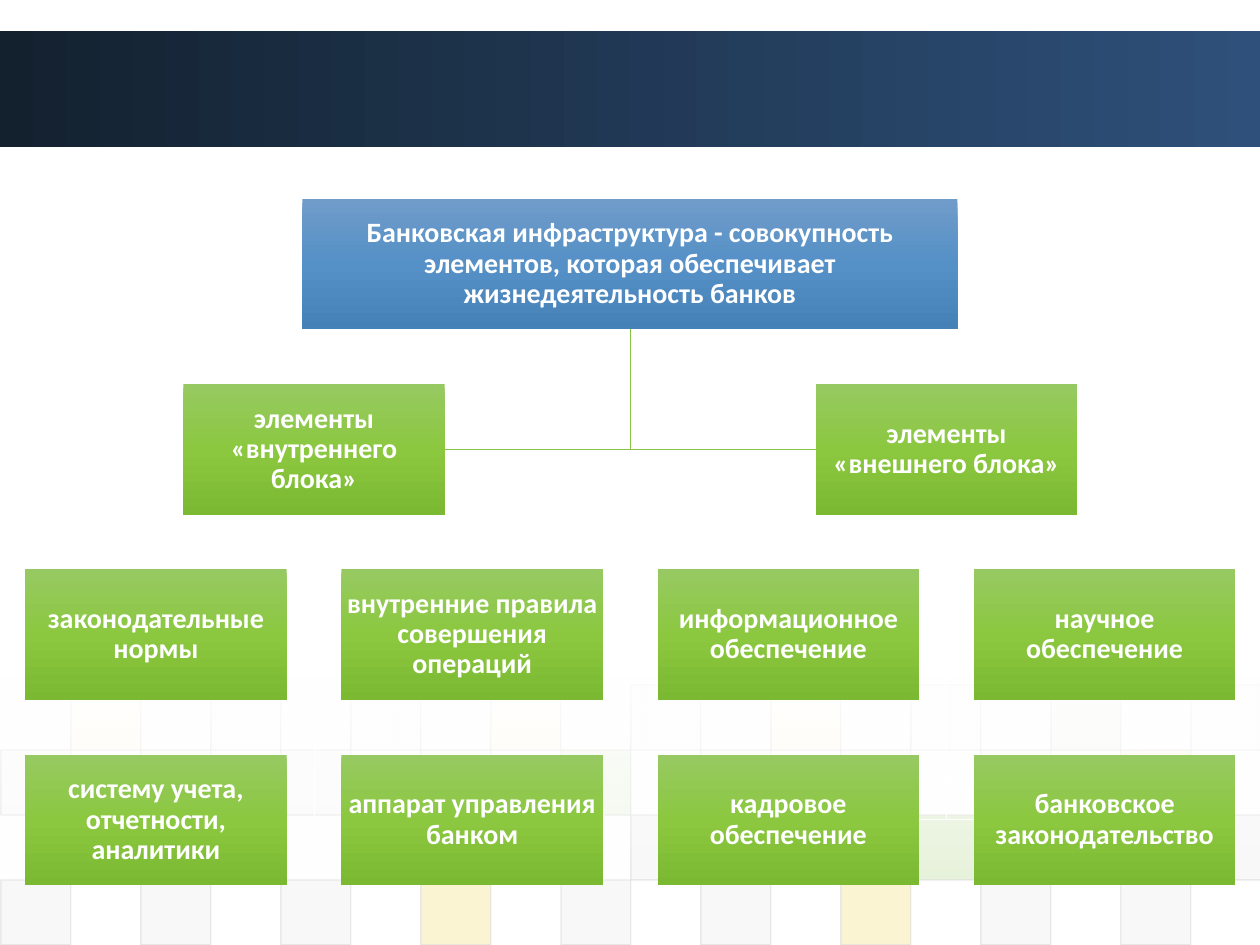
from lxml.etree import SubElement
from pptx import Presentation
from pptx.dml.color import RGBColor
from pptx.enum.shapes import MSO_SHAPE as Shape
from pptx.enum.text import MSO_ANCHOR as Anchor, PP_ALIGN as Align
from pptx.oxml.ns import qn
from pptx.util import Pt

WHITE = RGBColor(0xFF, 0xFF, 0xFF)
GREEN = RGBColor(0x8A, 0xC2, 0x46)
GRAY = RGBColor(0xDD, 0xDD, 0xDD)
LIGHT_GRAY = RGBColor(0xEA, 0xEA, 0xEA)
YELLOW = RGBColor(0xEF, 0xC8, 0x21)
NAVY = RGBColor(0x13, 0x21, 0x2F)
STEEL = RGBColor(0x2E, 0x50, 0x7A)
BLUE_STOPS = [(0, RGBColor(0x70, 0x9C, 0xC9), 100),
              (50, RGBColor(0x55, 0x90, 0xC7), 100),
              (100, RGBColor(0x45, 0x80, 0xB7), 100)]
GREEN_STOPS = [(0, RGBColor(0x97, 0xC9, 0x62), 100),
               (50, RGBColor(0x8B, 0xC8, 0x40), 100),
               (100, RGBColor(0x7C, 0xB9, 0x32), 100)]

presentation = Presentation()
presentation.slide_width = Pt(720)
presentation.slide_height = Pt(540)
slide = presentation.slides.add_slide(presentation.slide_layouts[6])
shapes = slide.shapes


def set_gradient(shape, stops, angle):
    shape.fill.gradient()
    gradient = shape._element.spPr.find(qn("a:gradFill"))
    for child in list(gradient):
        gradient.remove(child)
    stop_list = SubElement(gradient, qn("a:gsLst"))
    for position, color, opacity in stops:
        stop = SubElement(stop_list, qn("a:gs"), pos=str(position * 1000))
        color_element = SubElement(stop, qn("a:srgbClr"), val=str(color))
        SubElement(color_element, qn("a:alpha"), val=str(opacity * 1000))
    SubElement(gradient, qn("a:lin"), ang=str(angle * 60000), scaled="0")


def add_box(text, *, left, top, width, height, stops, angle=90, size=16):
    shape = shapes.add_shape(Shape.RECTANGLE, Pt(left), Pt(top), Pt(width), Pt(height))
    shape.shadow.inherit = False
    shape.line.fill.background()
    set_gradient(shape, stops, angle)
    if not text:
        return
    frame = shape.text_frame
    frame.word_wrap = True
    frame.vertical_anchor = Anchor.MIDDLE
    frame.margin_left = frame.margin_right = Pt(0.75)
    frame.margin_top = frame.margin_bottom = Pt(0.75)
    paragraph = frame.paragraphs[0]
    paragraph.text = text
    paragraph.alignment = Align.CENTER
    paragraph.line_spacing = 0.9
    paragraph.font.name = "Calibri"
    paragraph.font.size = Pt(size)
    paragraph.font.bold = True
    paragraph.font.color.rgb = WHITE


add_box("", left=0, top=18, width=720, height=66,
        stops=[(0, NAVY, 100), (100, STEEL, 100)], angle=0)

TILE_COLORS = {"D": GRAY, "E": LIGHT_GRAY, "G": GREEN, "Y": YELLOW}
TILE_ROWS = [("YEEYDYEGE", 1, 5), ("DDDDGDDDY", 0, 10),
             ("DGDDDDGDD", 1, 20), ("DDDYDDYDD", 0, 20)]
TILE_WIDTH, TILE_HEIGHT = 40, 37.1
for row, (colors, first_column, opacity) in enumerate(TILE_ROWS):
    for index, key in enumerate(colors):
        column = first_column + 2 * index
        tile = shapes.add_shape(
            Shape.RECTANGLE, Pt(0.5 + column * TILE_WIDTH), Pt(391.5 + row * TILE_HEIGHT),
            Pt(TILE_WIDTH), Pt(TILE_HEIGHT))
        tile.shadow.inherit = False
        tile.fill.solid()
        tile.fill.fore_color.rgb = TILE_COLORS[key]
        tile.line.color.rgb = GRAY
        tile.line.width = Pt(0.75)
        color_elements = tile._element.spPr.iter(qn("a:srgbClr"))
        for color_element, alpha in zip(list(color_elements), (opacity, 60)):
            SubElement(color_element, qn("a:alpha"), val=str(alpha * 1000))

add_box("", left=0, top=386.6, width=720, height=116.6,
        stops=[(0, WHITE, 90), (100, WHITE, 0)])

BOX_WIDTH, BOX_HEIGHT = 149.4, 74.7
COLUMN_STEP, ROW_STEP = 180.7, 105.9
FIRST_LEFT, FIRST_TOP = 14.4, 113.5
ROOT_WIDTH, ROOT_CENTER = 374.4, 360
column_lefts = [FIRST_LEFT + column * COLUMN_STEP for column in range(4)]
row_tops = [FIRST_TOP + row * ROW_STEP for row in range(4)]
block_lefts = [column_lefts[column] + COLUMN_STEP / 2 for column in (0, 2)]
block_centers = [left + BOX_WIDTH / 2 for left in block_lefts]

elbows = [(center, row_tops[1] + BOX_HEIGHT, center + side * (COLUMN_STEP - BOX_WIDTH) / 2,
           top + BOX_HEIGHT / 2, WHITE)
          for center in block_centers for top in row_tops[2:] for side in (-1, 1)]
elbows += [(ROOT_CENTER, row_tops[0] + BOX_HEIGHT, end, row_tops[1] + BOX_HEIGHT / 2, GREEN)
           for end in (block_lefts[0] + BOX_WIDTH, block_lefts[1])]
for start_x, start_y, end_x, end_y, color in elbows:
    builder = shapes.build_freeform(Pt(start_x), Pt(start_y))
    builder.add_line_segments([(Pt(start_x), Pt(end_y)), (Pt(end_x), Pt(end_y))], close=False)
    elbow = builder.convert_to_shape()
    elbow.shadow.inherit = False
    elbow.fill.background()
    elbow.line.color.rgb = color
    elbow.line.width = Pt(0.5)

add_box("Банковская инфраструктура - совокупность элементов, которая обеспечивает "
        "жизнедеятельность банков", left=ROOT_CENTER - ROOT_WIDTH / 2, top=row_tops[0],
        width=ROOT_WIDTH, height=BOX_HEIGHT, stops=BLUE_STOPS)

box_rows = [
    (row_tops[1], block_lefts, ["элементы «внутреннего блока»", "элементы «внешнего блока»"]),
    (row_tops[2], column_lefts, ["законодательные нормы",
                                 "внутренние правила совершения операций",
                                 "информационное обеспечение", "научное обеспечение"]),
    (row_tops[3], column_lefts, ["систему учета, отчетности, аналитики",
                                 "аппарат управления банком",
                                 "кадровое обеспечение", "банковское законодательство"]),
]
for top, lefts, texts in box_rows:
    for left, text in zip(lefts, texts):
        add_box(text, left=left, top=top, width=BOX_WIDTH, height=BOX_HEIGHT, stops=GREEN_STOPS)

presentation.save("out.pptx")
